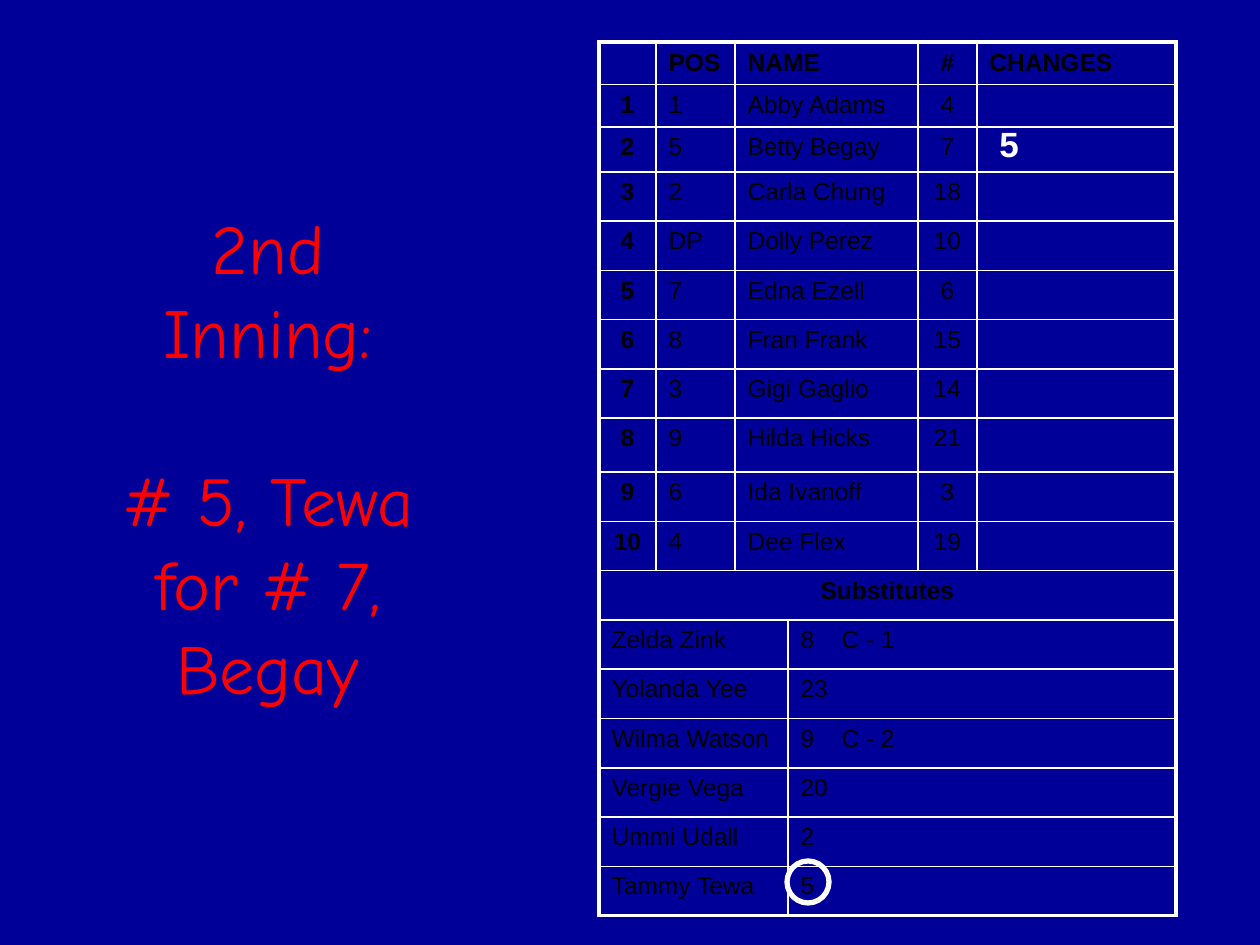
from lxml.etree import SubElement
from pptx import Presentation
from pptx.dml.color import RGBColor
from pptx.enum.shapes import MSO_SHAPE
from pptx.enum.text import MSO_ANCHOR as ANCHOR, PP_ALIGN as ALIGN
from pptx.oxml.ns import qn
from pptx.util import Pt

PX = 914400 // 126
NAVY, WHITE, BLACK, RED = "000099", "FFFFFF", "000000", "FF0000"
THIN, THICK = 1, 2.25
TAB_STOP = 41

COLUMNS = [57, 79, 53, 130, 59, 199]
FIXED_ROWS = {0: 42, 1: 40, 2: 45, 8: 54}
HEADINGS = ["", "POS", "NAME", "#", "CHANGES"]
LINEUP = [
    ("1", "Abby Adams", "4"),
    ("5", "Betty Begay", "7"),
    ("2", "Carla Chung", "18"),
    ("DP", "Dolly Perez", "10"),
    ("7", "Edna Ezell", "6"),
    ("8", "Fran Frank", "15"),
    ("3", "Gigi Gaglio", "14"),
    ("9", "Hilda Hicks", "21"),
    ("6", "Ida Ivanoff", "3"),
    ("4", "Dee Flex", "19"),
]
SUBSTITUTES = [
    ("Zelda Zink", "8\tC - 1"),
    ("Yolanda Yee", "23"),
    ("Wilma Watson", "9\tC - 2"),
    ("Vergie Vega", "20"),
    ("Ummi Udall", "2"),
    ("Tammy Tewa", "5"),
]
ENTRY = {"name": "Arial", "size": Pt(14), "bold": False}
HEADING = {**ENTRY, "bold": True}
CHANGE = {"name": "Arial", "size": Pt(20), "bold": True}
ANNOUNCEMENT = {"name": "Comic Neue", "size": Pt(40), "bold": False}


def px(*lengths):
    return [round(length * PX) for length in lengths]


def paint(color_format, hex_color):
    color_format.rgb = RGBColor.from_string(hex_color)


def write(paragraph, words, style, color, align=ALIGN.LEFT):
    paragraph.alignment = align
    run = paragraph.add_run()
    run.text = words
    for attribute, value in style.items():
        setattr(run.font, attribute, value)
    paint(run.font.color, color)


def add_text_area(slide, box, anchor):
    frame = slide.shapes.add_textbox(*px(*box)).text_frame
    frame.word_wrap = True
    frame.vertical_anchor = anchor
    return frame


def add_announcement(slide, box):
    frame = add_text_area(slide, box, ANCHOR.MIDDLE)
    inning = frame.paragraphs[0]
    substitution = frame.add_paragraph()
    substitution.space_before = Pt(48)
    for paragraph, words in ((inning, "2nd Inning:"),
                             (substitution, "# 5, Tewa for # 7, Begay")):
        write(paragraph, words, ANNOUNCEMENT, RED, ALIGN.CENTER)


def set_borders(cell, widths):
    """Draw white borders; widths maps each side (L, R, T, B) to points."""
    properties = cell._tc.get_or_add_tcPr()
    for side, width in widths.items():
        border = SubElement(properties, qn(f"a:ln{side}"), w=str(Pt(width)))
        fill = SubElement(border, qn("a:solidFill"))
        SubElement(fill, qn("a:srgbClr"), val=WHITE)


def fill_cell(cell, words, style, align=ALIGN.LEFT):
    paragraph = cell.text_frame.paragraphs[0]
    if "\t" in words:
        tabs = SubElement(paragraph._p.get_or_add_pPr(), qn("a:tabLst"))
        SubElement(tabs, qn("a:tab"), pos=str(TAB_STOP * PX), algn="l")
    if words:
        write(paragraph, words, style, BLACK, align)


def card_rows():
    """Give each row as cells of (first column, span, words, style, align)."""
    left, center = ALIGN.LEFT, ALIGN.CENTER
    starts, spans = (0, 1, 2, 4, 5), (1, 1, 2, 1, 1)
    styles = (HEADING,) + (ENTRY,) * 4
    heading_aligns = (left, left, left, center, left)
    aligns = (center, left, left, center, left)
    rows = [list(zip(starts, spans, HEADINGS, (HEADING,) * 5, heading_aligns))]
    for order, player in enumerate(LINEUP, 1):
        rows.append(list(zip(starts, spans, (str(order), *player, ""), styles, aligns)))
    rows.append([(0, 6, "Substitutes", HEADING, center)])
    for name, number in SUBSTITUTES:
        rows.append([(0, 3, name, ENTRY, left), (3, 3, number, ENTRY, left)])
    return rows


def add_lineup_card(slide, box):
    rows = card_rows()
    last_row, last_column = len(rows) - 1, len(COLUMNS) - 1
    table = slide.shapes.add_table(len(rows), len(COLUMNS), *px(*box)).table
    table.first_row = table.horz_banding = False
    for column, width in zip(table.columns, px(*COLUMNS)):
        column.width = width
    shared = (box[3] - sum(FIXED_ROWS.values())) / (len(rows) - len(FIXED_ROWS))
    for index, row in enumerate(table.rows):
        row.height = px(FIXED_ROWS.get(index, shared))[0]

    for r, cells in enumerate(rows):
        for start, span, words, style, align in cells:
            cell, end = table.cell(r, start), start + span - 1
            if span > 1:
                cell.merge(table.cell(r, end))
            fill_cell(cell, words, style, align)
            cell.vertical_anchor = ANCHOR.MIDDLE if r == 0 else ANCHOR.TOP
            set_borders(cell, {
                "L": THICK if start == 0 else THIN,
                "R": THICK if end == last_column else THIN,
                "T": THICK if r == 0 else THIN,
                "B": THICK if r == last_row else THIN,
            })
    for cell in table.iter_cells():
        cell.fill.background()
        # Keeps empty cells from stretching their rows
        SubElement(cell.text_frame.paragraphs[0]._p, qn("a:endParaRPr"), sz="1400")


def add_change(slide, box):
    frame = add_text_area(slide, box, ANCHOR.TOP)
    write(frame.paragraphs[0], "5", CHANGE, WHITE)


def add_number_ring(slide, box):
    ring = slide.shapes.add_shape(MSO_SHAPE.OVAL, *px(*box))
    ring.shadow.inherit = False
    ring.fill.background()
    ring.line.width = Pt(3)
    paint(ring.line.color, WHITE)


def main():
    deck = Presentation()
    deck.slide_width, deck.slide_height = px(1260, 945)
    slide = deck.slides.add_slide(deck.slide_layouts[6])
    background = slide.background.fill
    background.solid()
    paint(background.fore_color, NAVY)
    add_lineup_card(slide, (599, 42, sum(COLUMNS), 871))
    add_announcement(slide, (95, 84, 346, 746))
    add_number_ring(slide, (787, 861, 42, 42))
    add_change(slide, (987, 116, 53, 54))
    deck.save("out.pptx")


if __name__ == "__main__":
    main()
